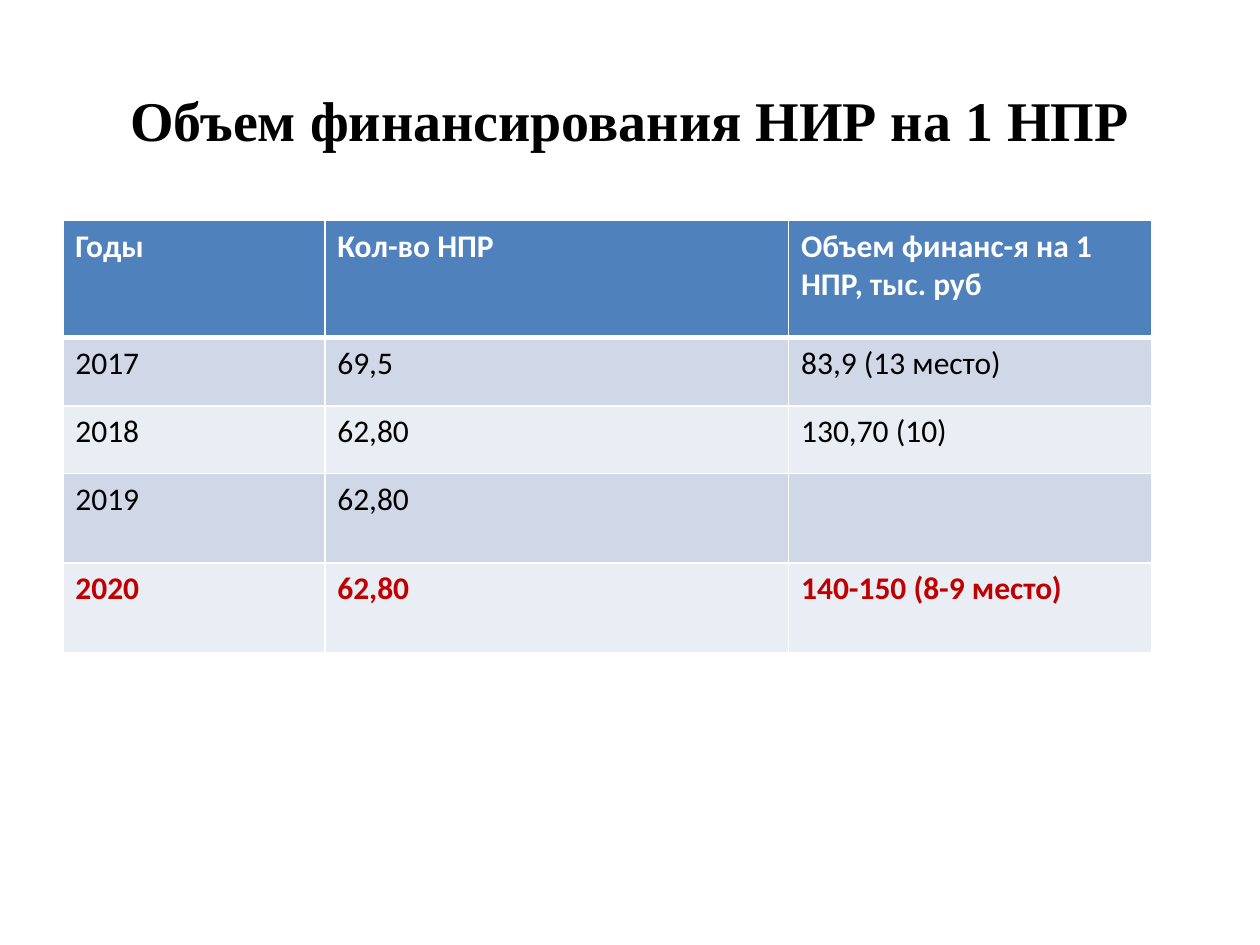
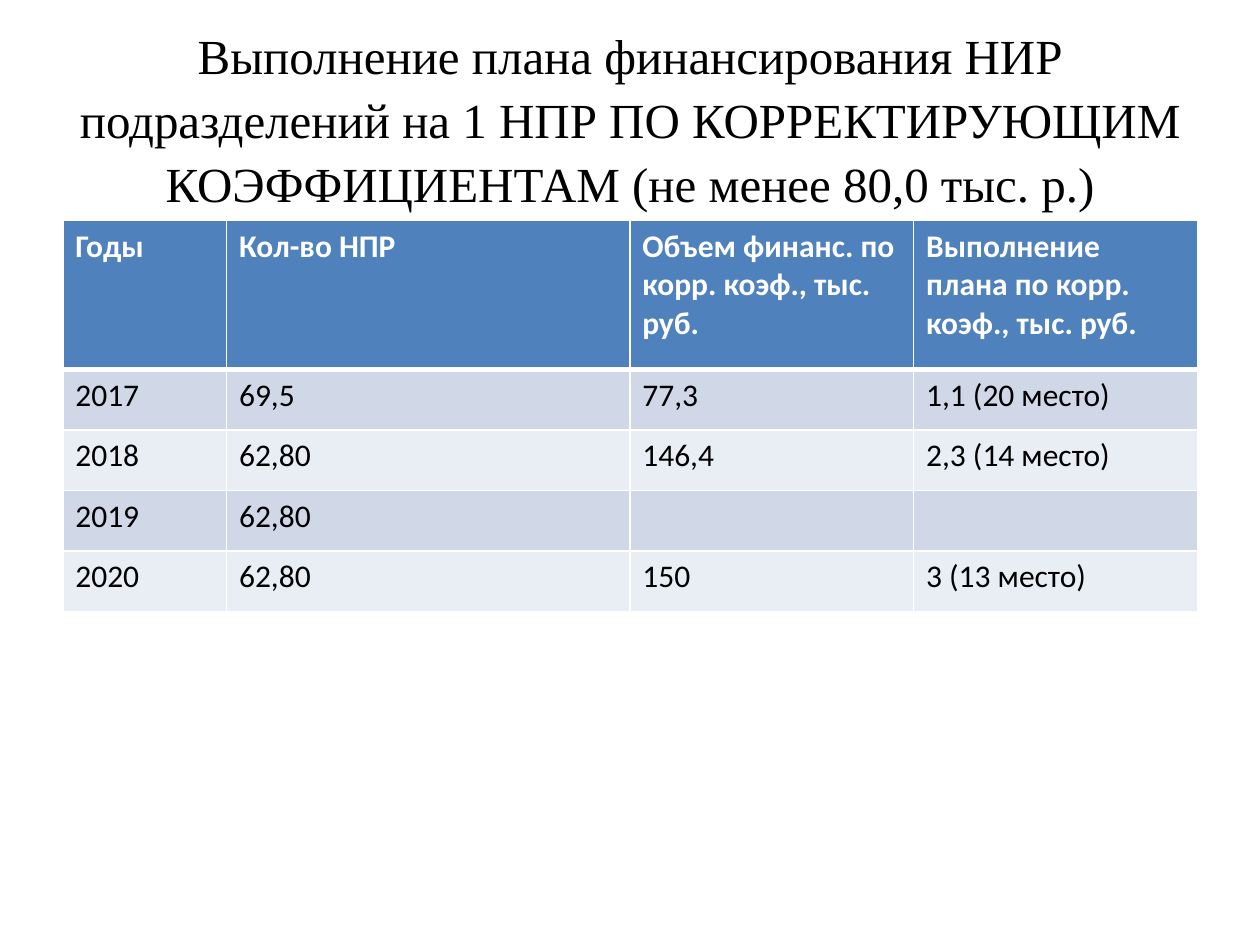
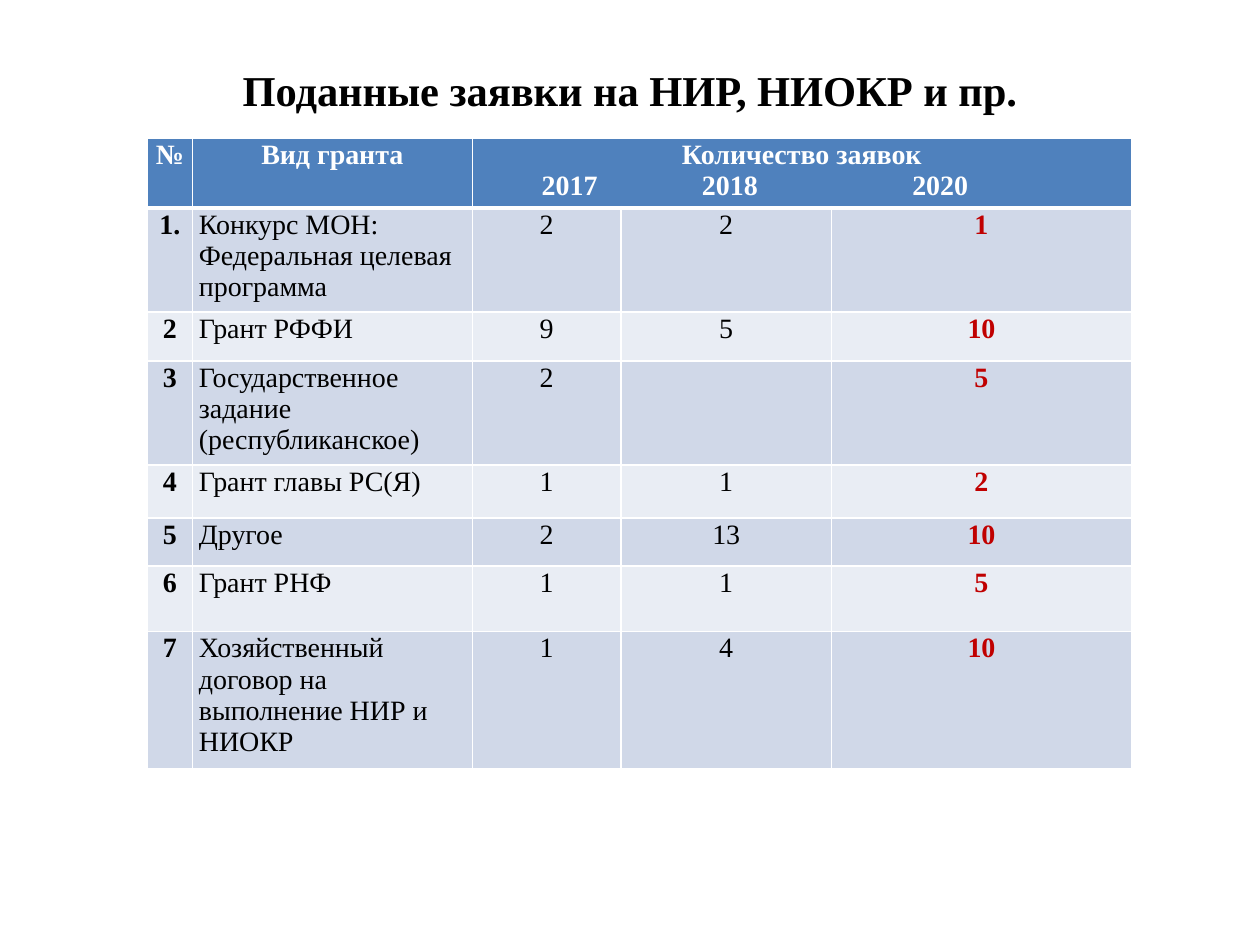
from dataclasses import dataclass
from typing import Optional

import pptx
import pptx.dml.color
import pptx.enum.text
import pptx.oxml
import pptx.oxml.ns
import pptx.util

Cm = pptx.util.Cm
Pt = pptx.util.Pt
RGBColor = pptx.dml.color.RGBColor
Align = pptx.enum.text.PP_ALIGN

WHITE = RGBColor(0xFF, 0xFF, 0xFF)
BLACK = RGBColor(0x00, 0x00, 0x00)
RED = RGBColor(0xC0, 0x00, 0x00)
HEADER_BLUE = RGBColor(0x4F, 0x81, 0xBD)
BAND_COLORS = (RGBColor(0xD0, 0xD8, 0xE8), RGBColor(0xE9, 0xED, 0xF4))

SERIF = "Times New Roman"
SANS = "Calibri"
THIN, THICK = Pt(1), Pt(3)
YEAR_TABS = (Cm(1.27), Cm(4.5), Cm(8.74))


@dataclass(frozen=True)
class Title:
    text: str
    size: float
    bold: bool = True
    height: float = 3.18


@dataclass(frozen=True)
class Grid:
    """A table; lengths are in centimetres and the first row is the header."""
    left: float
    top: float
    columns: tuple[float, ...]
    heights: tuple[float, ...]
    rows: tuple[tuple[str, ...], ...]
    font: str = SANS
    size: float = 18
    margins: tuple[float, float] = (0.25, 0.13)
    centered_columns: tuple[int, ...] = ()
    bold_columns: tuple[int, ...] = ()
    red_row: Optional[int] = None
    red_column: Optional[int] = None
    header_merge: Optional[tuple[int, int]] = None


@dataclass(frozen=True)
class Page:
    title: Title
    grid: Grid


PAGES = (
    Page(
        Title("Объем финансирования НИР на 1 НПР", 32),
        Grid(
            left=1.27, top=4.45,
            columns=(5.28, 9.35, 7.32),
            heights=(2.36, 1.37, 1.37, 1.8, 1.8),
            rows=(
                ("Годы", "Кол-во НПР", "Объем финанс-я на 1 НПР, тыс. руб"),
                ("2017", "69,5", "83,9 (13 место)"),
                ("2018", "62,80", "130,70 (10)"),
                ("2019", "62,80", ""),
                ("2020", "62,80", "140-150 (8-9 место)"),
            ),
            red_row=4,
        ),
    ),
    Page(
        Title("Выполнение плана финансирования НИР подразделений на 1 НПР "
              "ПО КОРРЕКТИРУЮЩИМ КОЭФФИЦИЕНТАМ (не менее 80,0 тыс. р.)",
              28, bold=False),
        Grid(
            left=1.27, top=4.45,
            columns=(3.3, 8.13, 5.72, 5.72),
            heights=(3.0,) + (1.22,) * 4,
            rows=(
                ("Годы", "Кол-во НПР", "Объем финанс. по корр. коэф., тыс. руб.",
                 "Выполнение плана по корр. коэф., тыс. руб."),
                ("2017", "69,5", "77,3", "1,1 (20 место)"),
                ("2018", "62,80", "146,4", "2,3 (14 место)"),
                ("2019", "62,80", "", ""),
                ("2020", "62,80", "150", "3 (13 место)"),
            ),
        ),
    ),
    Page(
        Title("Поданные заявки на НИР, НИОКР и пр.", 24.3, height=2.0),
        Grid(
            left=2.97, top=2.78,
            columns=(0.91, 5.64, 3.0, 4.24, 6.05),
            heights=(1.27, 1.93, 0.99, 1.93, 1.07, 0.97, 1.32, 2.54),
            rows=(
                ("№", "Вид гранта", "Количество заявок\n\t2017\t2018\t2020", "", ""),
                ("1.", "Конкурс МОН: Федеральная целевая программа", "2", "2", "1"),
                ("2", "Грант РФФИ", "9", "5", "10"),
                ("3", "Государственное задание (республиканское)", "2", "", "5"),
                ("4", "Грант главы РС(Я)", "1", "1", "2"),
                ("5", "Другое", "2", "13", "10"),
                ("6", "Грант РНФ", "1", "1", "5"),
                ("7", "Хозяйственный договор на выполнение НИР и НИОКР",
                 "1", "4", "10"),
            ),
            font=SERIF, size=16, margins=(0.13, 0.03),
            centered_columns=(0, 2, 3, 4), bold_columns=(0, 4),
            red_column=4, header_merge=(2, 4),
        ),
    ),
)


def add_tab_stops(para) -> None:
    properties = para._p.get_or_add_pPr()
    tabs = pptx.oxml.parse_xml(f"<a:tabLst {pptx.oxml.ns.nsdecls('a')}/>")
    for position in YEAR_TABS:
        tabs.append(pptx.oxml.parse_xml(
            f"<a:tab {pptx.oxml.ns.nsdecls('a')} pos=\"{int(position)}\" algn=\"l\"/>"))
    properties.append(tabs)


def write_text(frame, text: str, *, font: str, size: float, color: RGBColor,
               bold: bool = False, align: Align = Align.LEFT,
               line_spacing: Optional[float] = None) -> None:
    """Fill a frame, one paragraph a line; lines with tabs follow YEAR_TABS."""
    frame.word_wrap = True
    for index, line in enumerate(text.split("\n")):
        para = frame.add_paragraph() if index else frame.paragraphs[0]
        para.alignment = Align.LEFT if "\t" in line else align
        para.line_spacing = line_spacing
        if "\t" in line:
            add_tab_stops(para)
        para.font.size = Pt(size)
        if line:
            span = para.add_run()
            span.text = line
            span.font.name = font
            span.font.size = Pt(size)
            span.font.bold = bold
            span.font.color.rgb = color


def add_title(slide, title: Title) -> None:
    box = slide.shapes.add_textbox(Cm(1.27), Cm(0.76), Cm(22.86), Cm(title.height))
    box.text_frame.vertical_anchor = pptx.enum.text.MSO_ANCHOR.MIDDLE
    write_text(box.text_frame, title.text, font=SERIF, size=title.size, color=BLACK,
               bold=title.bold, align=Align.CENTER, line_spacing=1.09)


def set_borders(cell, top: int, bottom: int) -> None:
    properties = cell._tc.get_or_add_tcPr()
    for side, width in (("L", THIN), ("R", THIN), ("T", top), ("B", bottom)):
        properties.append(pptx.oxml.parse_xml(
            f"<a:ln{side} {pptx.oxml.ns.nsdecls('a')} w=\"{int(width)}\">"
            f"<a:solidFill><a:srgbClr val=\"{WHITE}\"/></a:solidFill></a:ln{side}>"))


def format_cell(cell, grid: Grid, row: int, column: int) -> None:
    is_header = row == 0
    is_red = row == grid.red_row or column == grid.red_column
    is_centered = column in grid.centered_columns or (is_header and grid.centered_columns)
    set_borders(cell, THICK if row == 1 else THIN, THICK if is_header else THIN)
    cell.fill.solid()
    cell.fill.fore_color.rgb = HEADER_BLUE if is_header else BAND_COLORS[(row - 1) % 2]
    cell.margin_left = cell.margin_right = Cm(grid.margins[0])
    cell.margin_top = cell.margin_bottom = Cm(grid.margins[1])
    write_text(
        cell.text_frame, grid.rows[row][column], font=grid.font, size=grid.size,
        color=WHITE if is_header else RED if is_red else BLACK,
        bold=is_header or row == grid.red_row or column in grid.bold_columns,
        align=Align.CENTER if is_centered else Align.LEFT)


def add_grid(slide, grid: Grid) -> None:
    table = slide.shapes.add_table(
        len(grid.rows), len(grid.columns), Cm(grid.left), Cm(grid.top),
        Cm(sum(grid.columns)), Cm(sum(grid.heights))).table
    for column, width in zip(table.columns, grid.columns):
        column.width = Cm(width)
    for row, height in zip(table.rows, grid.heights):
        row.height = Cm(height)
    if grid.header_merge:
        first, last = grid.header_merge
        table.cell(0, first).merge(table.cell(0, last))
    for row in range(len(grid.rows)):
        for column in range(len(grid.columns)):
            format_cell(table.cell(row, column), grid, row, column)


def main() -> None:
    deck = pptx.Presentation()
    deck.slide_width, deck.slide_height = Cm(25.4), Cm(19.05)
    for page in PAGES:
        slide = deck.slides.add_slide(deck.slide_layouts[6])
        add_title(slide, page.title)
        add_grid(slide, page.grid)
    deck.save("out.pptx")


if __name__ == "__main__":
    main()
